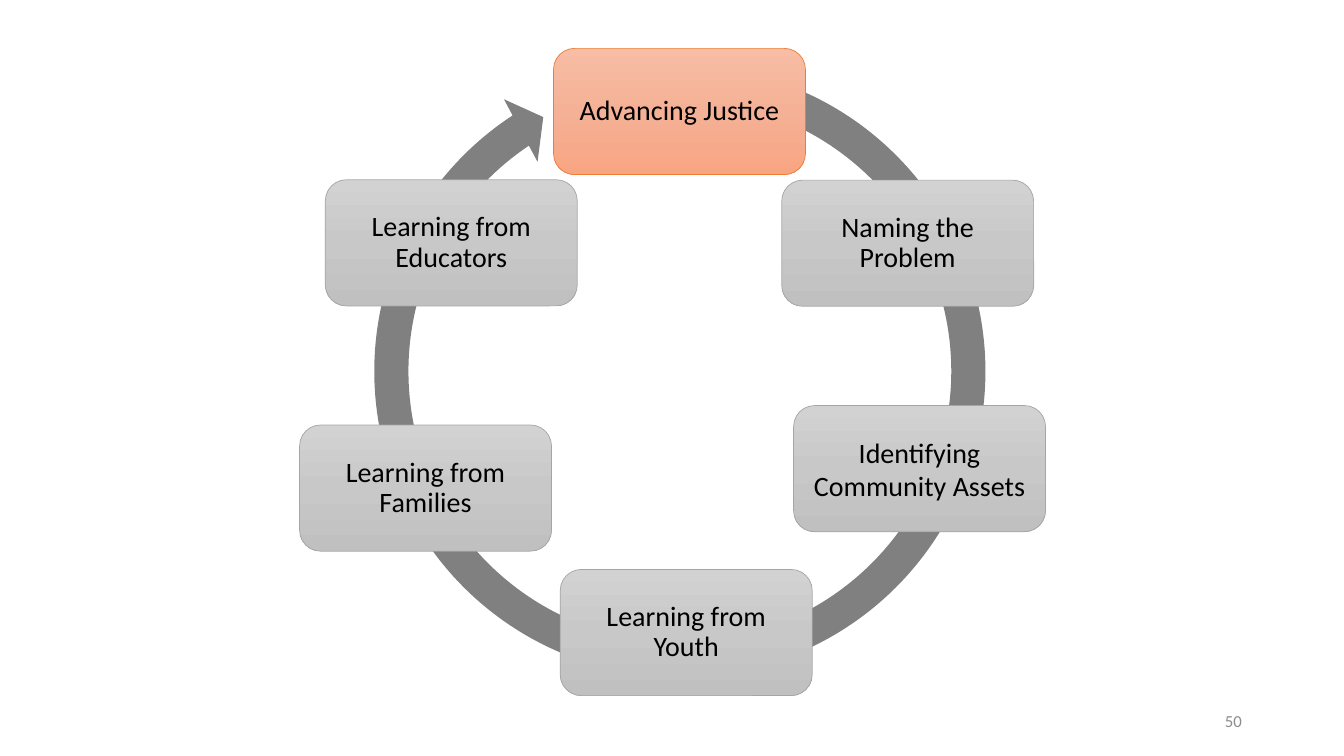
from copy import deepcopy
from dataclasses import dataclass

from pptx import Presentation
from pptx.dml.color import RGBColor
from pptx.enum.shapes import MSO_SHAPE as Preset
from pptx.enum.text import MSO_ANCHOR as Anchor, PP_ALIGN as Align
from pptx.util import Cm, Pt


@dataclass(frozen=True)
class Theme:
    font: str = "Calibri"
    step_size: int = 20
    number_size: int = 12
    text: str = "000000"
    number: str = "8C8C8C"
    ring: str = "808080"
    step_fill: tuple = ("D2D2D2", "C8C8C8", "C0C0C0")
    step_line: str = "A5A5A5"
    goal_fill: tuple = ("F7BDA5", "F5B196", "F8A582")
    goal_line: str = "ED7D31"


THEME = Theme()
STEP_WIDTH, STEP_HEIGHT = 6.35, 3.18

# label, left, top (cm), line spacing; clockwise after the goal
STEPS = [
    ("Naming the Problem", 19.7, 4.54, 0.9),
    ("Identifying Community Assets", 20, 10.22, 1.0),
    ("Learning from Youth", 14.12, 14.35, 0.9),
    ("Learning from Families", 7.55, 10.71, 0.9),
    ("Learning from Educators", 8.2, 4.53, 0.9),
]


def write_text(shape, text, *, size, color, align=Align.CENTER,
               line_spacing=1.0, inset=0.21):
    frame = shape.text_frame
    frame.word_wrap = True
    frame.vertical_anchor = Anchor.MIDDLE
    frame.margin_left = frame.margin_right = Cm(inset)
    frame.margin_top = frame.margin_bottom = Cm(inset)
    paragraph = frame.paragraphs[0]
    paragraph.text = text
    paragraph.alignment = align
    paragraph.line_spacing = line_spacing
    font = paragraph.runs[0].font
    font.name = THEME.font
    font.size = Pt(size)
    font.color.rgb = RGBColor.from_string(color)


def fill_downward(shape, colors):
    """Fill with evenly spaced gradient stops from top to bottom."""
    fill = shape.fill
    fill.gradient()
    fill.gradient_angle = 270
    stop_list = shape.element.spPr.gradFill.gsLst
    while len(stop_list) < len(colors):
        stop_list.append(deepcopy(stop_list[-1]))
    for index, (stop, color) in enumerate(zip(fill.gradient_stops, colors)):
        stop.position = index / (len(colors) - 1)
        stop.color.rgb = RGBColor.from_string(color)


def add_ring(slide):
    ring = slide.shapes.add_shape(
        Preset.CIRCULAR_ARROW, Cm(8.97), Cm(1.19), Cm(16.33), Cm(16.33))
    ring.shadow.inherit = False
    for index, value in enumerate((0.05274, 3.12630, 141.915, 171.485, 0.05477)):
        ring.adjustments[index] = value
    ring.fill.solid()
    ring.fill.fore_color.rgb = RGBColor.from_string(THEME.ring)
    ring.line.fill.background()


def add_step(slide, label, left, top, line_spacing=0.9,
             fill=THEME.step_fill, line=THEME.step_line):
    step = slide.shapes.add_shape(
        Preset.ROUNDED_RECTANGLE, Cm(left), Cm(top),
        Cm(STEP_WIDTH), Cm(STEP_HEIGHT))
    step.shadow.inherit = False
    fill_downward(step, fill)
    step.line.color.rgb = RGBColor.from_string(line)
    step.line.width = Pt(0.5)
    write_text(step, label, size=THEME.step_size, color=THEME.text,
               line_spacing=line_spacing)


def add_slide_number(slide, number):
    box = slide.shapes.add_textbox(Cm(23.93), Cm(17.65), Cm(7.62), Cm(1.02))
    write_text(box, number, size=THEME.number_size, color=THEME.number,
               align=Align.RIGHT, inset=0.25)


def main():
    presentation = Presentation()
    presentation.slide_width, presentation.slide_height = Cm(33.87), Cm(19.05)
    slide = presentation.slides.add_slide(presentation.slide_layouts[6])
    add_slide_number(slide, "50")
    add_ring(slide)
    add_step(slide, "Advancing Justice", 13.95, 1.22,
             fill=THEME.goal_fill, line=THEME.goal_line)
    for step in STEPS:
        add_step(slide, *step)
    presentation.save("out.pptx")


if __name__ == "__main__":
    main()
